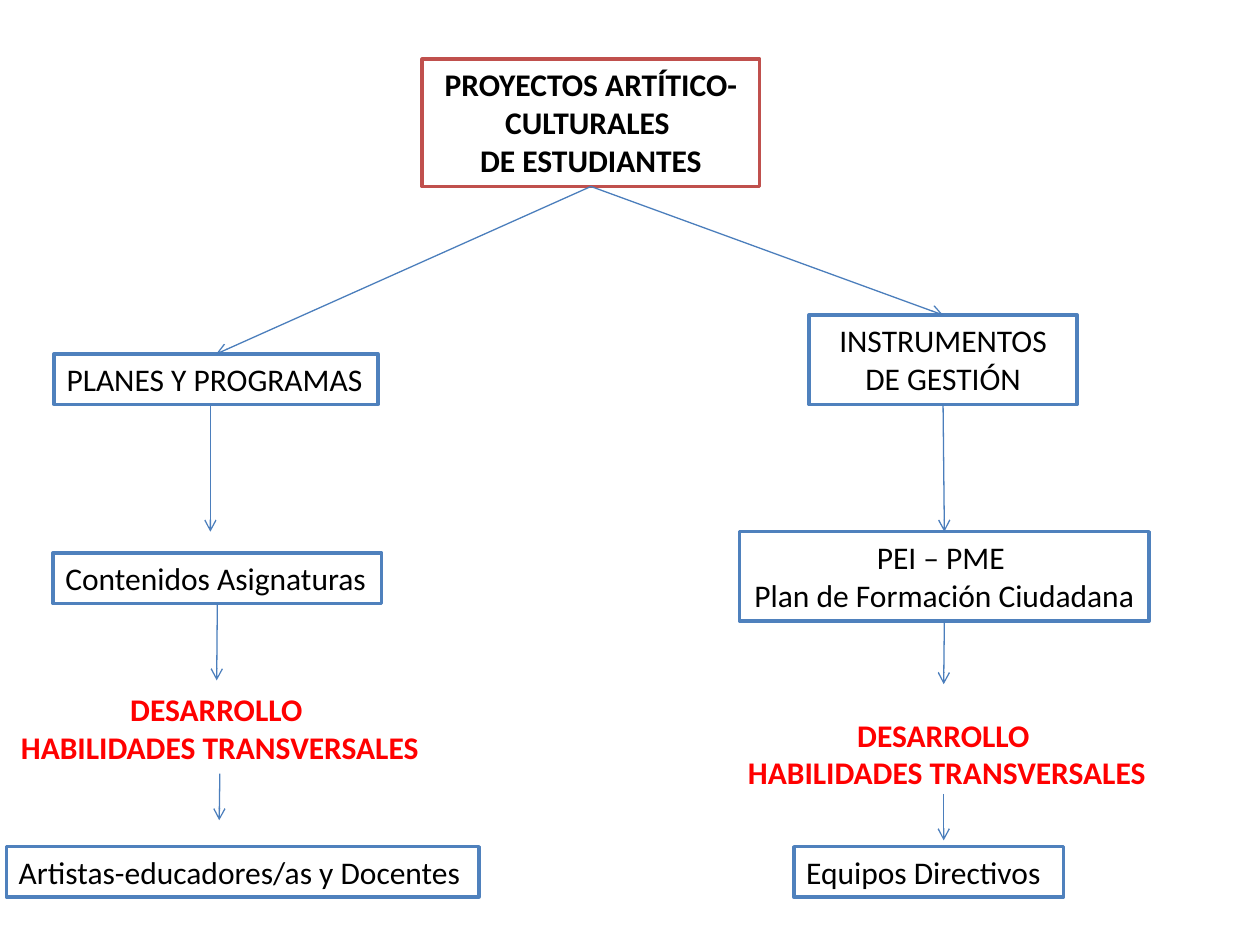
from lxml import etree
from pptx import Presentation
from pptx.dml.color import RGBColor
from pptx.enum.shapes import MSO_CONNECTOR, MSO_SHAPE
from pptx.enum.text import MSO_ANCHOR, MSO_AUTO_SIZE, PP_ALIGN
from pptx.oxml.ns import qn
from pptx.util import Inches, Pt

RECT, STRAIGHT = MSO_SHAPE.RECTANGLE, MSO_CONNECTOR.STRAIGHT
LEFT, CENTER = PP_ALIGN.LEFT, PP_ALIGN.CENTER
TOP, GROW = MSO_ANCHOR.TOP, MSO_AUTO_SIZE.SHAPE_TO_FIT_TEXT
TOP_SIDE, BOTTOM_SIDE = 0, 2
COLORS = {"paper": "FFFFFF", "ink": "000000", "skill": "FF0000",
          "root": "C0504D", "node": "4F81BD", "arrow": "4B7EBC"}
ONE_LINE, TWO_LINES, THREE_LINES = 0.4, 0.71, 1.01
SKILLS = ("DESARROLLO ", "HABILIDADES TRANSVERSALES")


def rgb(name):
    return RGBColor.from_string(COLORS[name])


def write(sp, lines, color="ink", bold=False, align=CENTER):
    tf = sp.text_frame
    tf.word_wrap = True
    tf.auto_size = GROW
    tf.vertical_anchor = TOP
    for i, line in enumerate(lines):
        p = tf.paragraphs[0] if i == 0 else tf.add_paragraph()
        p.alignment = align
        r = p.add_run()
        r.text = line
        r.font.name, r.font.size, r.font.bold = "Calibri", Pt(18), bold
        r.font.color.rgb = rgb(color)


def add_box(s, x, y, w, h, lines, line="node", **style):
    sp = s.shapes.add_shape(RECT, *map(Inches, (x, y, w, h)))
    sp.shadow.inherit = False
    sp.fill.solid()
    sp.fill.fore_color.rgb = rgb("paper")
    sp.line.color.rgb = rgb(line)
    sp.line.width = Pt(2)
    write(sp, lines, **style)
    return sp


def add_skills(s, x, y):
    sp = s.shapes.add_textbox(*map(Inches, (x, y, 3.39, TWO_LINES)))
    write(sp, SKILLS, color="skill", bold=True)
    return sp


def add_arrow(s, start, end, source=None, target=None):
    c = s.shapes.add_connector(STRAIGHT, *map(Inches, start + end))
    if source is not None:
        c.begin_connect(source, BOTTOM_SIDE)
    if target is not None:
        c.end_connect(target, TOP_SIDE)
    c.line.color.rgb = rgb("arrow")
    c.line.width = Pt(0.75)
    etree.SubElement(c.line._get_or_add_ln(), qn("a:tailEnd"), type="arrow")
    etree.SubElement(c._element.spPr, qn("a:effectLst"))


def main():
    prs = Presentation()
    prs.slide_width, prs.slide_height = Inches(10), Inches(7.5)
    s = prs.slides.add_slide(prs.slide_layouts[6])

    # Root
    root = add_box(s, 3.35, 0.47, 2.68, THREE_LINES,
                   ("PROYECTOS ARTÍTICO-CULTURALES ", "DE ESTUDIANTES"),
                   line="root", bold=True)

    # Left branch: curriculum
    plans = add_box(s, 0.43, 2.81, 2.57, ONE_LINE,
                    ("PLANES Y PROGRAMAS",), align=LEFT)
    contents = add_box(s, 0.42, 4.39, 2.61, ONE_LINE,
                       ("Contenidos Asignaturas",), align=LEFT)
    add_box(s, 0.05, 6.72, 3.75, ONE_LINE,
            ("Artistas-educadores/as y Docentes",), align=LEFT)
    left_skills = add_skills(s, 0.05, 5.43)

    # Right branch: management
    tools = add_box(s, 6.42, 2.5, 2.13, TWO_LINES, ("INSTRUMENTOS DE GESTIÓN",))
    pei = add_box(s, 5.87, 4.22, 3.25, TWO_LINES,
                  ("PEI – PME ", "Plan de Formación Ciudadana"))
    add_box(s, 6.3, 6.72, 2.14, ONE_LINE, ("Equipos Directivos",), align=LEFT)
    add_skills(s, 5.82, 5.63)

    # Arrows, joined where they meet the middle of a side
    add_arrow(s, (4.69, 1.48), (7.48, 2.5), root, tools)
    add_arrow(s, (4.69, 1.48), (1.72, 2.81), root, plans)
    add_arrow(s, (1.67, 3.22), (1.67, 4.22))
    add_arrow(s, (1.72, 4.79), (1.72, 5.4), contents)
    add_arrow(s, (1.74, 6.13), (1.74, 6.51), left_skills)
    add_arrow(s, (7.48, 3.21), (7.49, 4.22), tools, pei)
    add_arrow(s, (7.49, 4.93), (7.49, 5.43), pei)
    add_arrow(s, (7.49, 6.3), (7.49, 6.67))

    prs.save("out.pptx")


if __name__ == "__main__":
    main()
